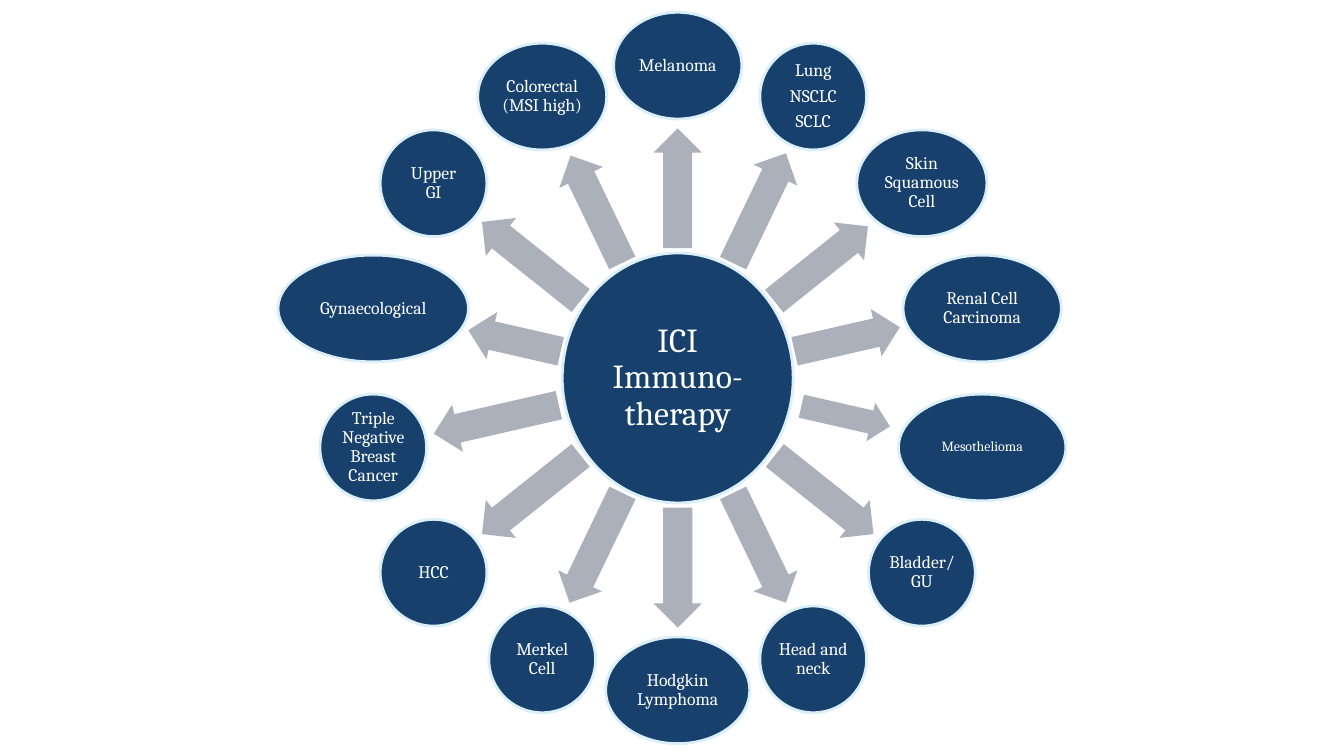
import math
from dataclasses import dataclass

import pptx
import pptx.dml.color
import pptx.enum.shapes
import pptx.enum.text
import pptx.util
from pptx.util import Cm


@dataclass(frozen=True)
class Theme:
    """Colours, font and type sizes of the slide."""
    disc: str = "17406D"
    rim: str = "DBEFF9"
    arrow: str = "ACB0BA"
    text: str = "FFFFFF"
    font: str = "Cambria"
    hub_size: float = 24
    label_size: float = 12.6
    small_size: float = 10


THEME = Theme()
SHAPES = pptx.enum.shapes.MSO_SHAPE
HUB = "ICI\vImmuno-therapy"
HUB_WIDTH, HUB_HEIGHT = 5.82, 6.3
DISC_HEIGHT = 2.69
ARROW_HEIGHT = 1.22

# label, disc width, arrow distance from centre, arrow length
CANCERS = [
    ("Melanoma", 3.23, 4.78, 3.02),
    ("Lung\nNSCLC\nSCLC", 2.69, 4.75, 3.07),
    ("Skin Squamous Cell", 3.28, 4.62, 3.02),
    ("Renal Cell Carcinoma", 3.99, 4.38, 2.72),
    ("Mesothelioma", 4.22, 4.34, 2.29),
    ("Bladder/ GU", 2.69, 4.72, 3.18),
    ("Head and neck", 2.69, 4.75, 3.07),
    ("Hodgkin Lymphoma", 3.63, 4.78, 3.02),
    ("Merkel Cell", 2.69, 4.75, 3.07),
    ("HCC", 2.69, 4.72, 3.18),
    ("Triple Negative Breast Cancer", 2.69, 4.69, 3.23),
    ("Gynaecological", 4.8, 4.22, 2.39),
    ("Upper\vGI", 2.69, 4.72, 3.18),
    ("Colorectal (MSI high)", 3.25, 4.72, 3.0),
]


def rgb(value):
    """Return a colour from its hex value."""
    return pptx.dml.color.RGBColor.from_string(value)


def add_centred(s, kind, cx, cy, width, height, fill):
    """Add a filled shape centred on a point given in centimetres."""
    sp = s.shapes.add_shape(kind, Cm(cx - width / 2), Cm(cy - height / 2),
                            Cm(width), Cm(height))
    sp.shadow.inherit = False
    sp.fill.solid()
    sp.fill.fore_color.rgb = rgb(fill)
    return sp


def add_disc(s, cx, cy, width, height, text, size):
    """Add a rimmed ellipse with a centred label."""
    sp = add_centred(s, SHAPES.OVAL, cx, cy, width, height, THEME.disc)
    sp.line.color.rgb = rgb(THEME.rim)
    sp.line.width = pptx.util.Pt(2)
    tf = sp.text_frame
    tf.word_wrap = True
    tf.vertical_anchor = pptx.enum.text.MSO_ANCHOR.MIDDLE
    tf.margin_left = tf.margin_right = tf.margin_top = tf.margin_bottom = Cm(0.05)
    tf.text = text
    for p in tf.paragraphs:
        p.alignment = pptx.enum.text.PP_ALIGN.CENTER
        p.line_spacing = 0.9
        p.space_after = pptx.util.Pt(size * 0.35)
        p.font.name = THEME.font
        p.font.size = pptx.util.Pt(size)
        p.font.color.rgb = rgb(THEME.text)


def add_arrow(s, cx, cy, length, height, rotation):
    """Add a block arrow turned outwards."""
    sp = add_centred(s, SHAPES.RIGHT_ARROW, cx, cy, length, height, THEME.arrow)
    sp.line.fill.background()
    sp.adjustments[0] = 0.6
    sp.adjustments[1] = 0.5
    sp.rotation = rotation % 360


def add_wheel(s, left, top, width, height):
    """Place the hub and its ring of cancers in the given box."""
    cx, cy = left + width / 2, top + height / 2
    orbit = (height - DISC_HEIGHT) / 2
    add_disc(s, cx, cy, HUB_WIDTH, HUB_HEIGHT, HUB, THEME.hub_size)
    for i, (label, disc_width, distance, length) in enumerate(CANCERS):
        degrees = 360 * i / len(CANCERS) - 90
        dx, dy = math.cos(math.radians(degrees)), math.sin(math.radians(degrees))
        small = label == "Mesothelioma"
        add_arrow(s, cx + distance * dx, cy + distance * dy, length,
                  0.99 if small else ARROW_HEIGHT, degrees)
        add_disc(s, cx + orbit * dx, cy + orbit * dy, disc_width, DISC_HEIGHT,
                 label, THEME.small_size if small else THEME.label_size)


def main():
    """Build and save the presentation."""
    prs = pptx.Presentation()
    prs.slide_width, prs.slide_height = Cm(33.87), Cm(19.05)
    s = prs.slides.add_slide(prs.slide_layouts[6])
    add_wheel(s, 6.99, 0.31, 20.18, 18.43)
    prs.save("out.pptx")


if __name__ == "__main__":
    main()
